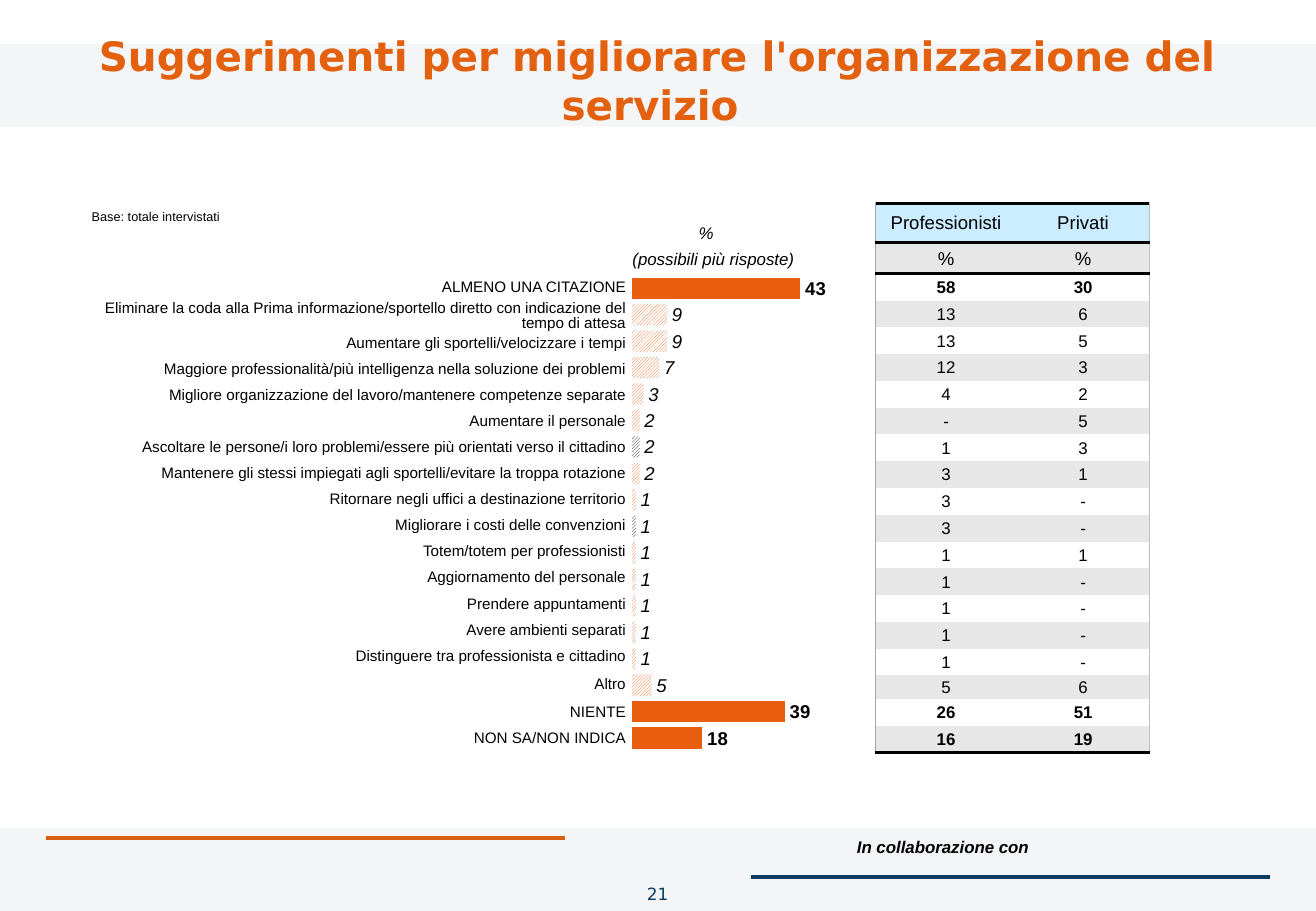
from dataclasses import dataclass

from lxml import etree
from pptx import Presentation
from pptx import util as u
from pptx.chart.data import CategoryChartData
from pptx.dml.color import RGBColor
from pptx.enum import chart as ch, dml, shapes, text
from pptx.oxml import parse_xml
from pptx.oxml.ns import nsdecls, qn


@dataclass(frozen=True)
class Theme:
    title_orange: str = "E3600F"
    bar_orange: str = "E95E0F"
    navy: str = "073C62"
    band: str = "1E3D5C"
    band_opacity: int = 5
    header: str = "CCECFF"
    stripe: str = "E7E7E7"
    left_edge: str = "A6A6A6"
    right_edge: str = "BFBFBF"
    black: str = "000000"
    white: str = "FFFFFF"
    title_size: float = 24
    header_size: float = 11
    body_size: float = 10
    label_size: float = 9
    note_size: float = 7.5
    sans: str = "Arial"
    display: str = "DejaVu Sans"


THEME = Theme()
Pt = u.Pt
ALIGN, ANCHOR = text.PP_ALIGN, text.MSO_ANCHOR
NO_STYLE = "{2D5ABB26-0587-4C30-8999-92F81FD0307C}"

ANSWERS = [  # suggestion, total, professionals, private citizens
    ("ALMENO UNA CITAZIONE", 43, "58", "30"),
    ("Eliminare la coda alla Prima informazione/sportello diretto con indicazione del tempo di attesa", 9, "13", "6"),
    ("Aumentare gli sportelli/velocizzare i tempi", 9, "13", "5"),
    ("Maggiore professionalità/più intelligenza nella soluzione dei problemi", 7, "12", "3"),
    ("Migliore organizzazione del lavoro/mantenere competenze separate", 3, "4", "2"),
    ("Aumentare il personale", 2, "-", "5"),
    ("Ascoltare le persone/i loro problemi/essere più orientati verso il cittadino", 2, "1", "3"),
    ("Mantenere gli stessi impiegati agli sportelli/evitare la troppa rotazione", 2, "3", "1"),
    ("Ritornare negli uffici a destinazione territorio", 1, "3", "-"),
    ("Migliorare i costi delle convenzioni", 1, "3", "-"),
    ("Totem/totem per professionisti", 1, "1", "1"),
    ("Aggiornamento del personale", 1, "1", "-"),
    ("Prendere appuntamenti", 1, "1", "-"),
    ("Avere ambienti separati", 1, "1", "-"),
    ("Distinguere tra professionista e cittadino", 1, "1", "-"),
    ("Altro", 5, "5", "6"),
    ("NIENTE", 39, "26", "51"),
    ("NON SA/NON INDICA", 18, "16", "19"),
]
SUMMARY_ROWS = (0, 16, 17)
BLACK_HATCHED = (6, 9)


def rgb(value):
    return RGBColor.from_string(value)


def format_font(font, size, color=THEME.black, name=THEME.sans, bold=False, italic=False):
    font.size, font.name, font.bold, font.italic = Pt(size), name, bold, italic
    font.color.rgb = rgb(color)


def write(frame, words, align=ALIGN.CENTER, spacing=None, **font):
    paragraph = frame.paragraphs[0]
    paragraph.alignment = align
    if spacing is not None:
        paragraph.line_spacing = spacing
    run = paragraph.add_run()
    run.text = words
    format_font(run.font, **font)


def set_insets(target, left, top, right, bottom):
    target.margin_left, target.margin_top = Pt(left), Pt(top)
    target.margin_right, target.margin_bottom = Pt(right), Pt(bottom)


def add_text(slide, box, words, insets=(7.2, 3.6, 7.2, 3.6), anchor=ANCHOR.TOP, **style):
    frame = slide.shapes.add_textbox(*map(Pt, box)).text_frame
    frame.word_wrap = True
    frame.vertical_anchor = anchor
    set_insets(frame, *insets)
    write(frame, words, **style)


def add_rule(slide, left, right, y, color):
    rule = slide.shapes.add_connector(shapes.MSO_CONNECTOR.STRAIGHT, Pt(left), Pt(y), Pt(right), Pt(y))
    rule.line.color.rgb = rgb(color)
    rule.line.width = Pt(2)
    etree.SubElement(rule._element.spPr, qn("a:effectLst"))


def add_band(slide, top):
    band = slide.shapes.add_shape(shapes.MSO_SHAPE.RECTANGLE, 0, Pt(top), Pt(780), Pt(49))
    band.shadow.inherit = False
    band.line.fill.background()
    band.fill.solid()
    band.fill.fore_color.rgb = rgb(THEME.band)
    color = band._element.spPr.find(f".//{qn('a:srgbClr')}")
    etree.SubElement(color, qn("a:alpha"), val=str(THEME.band_opacity * 1000))


def place_title(slide, words):
    title = slide.shapes.title
    slide.shapes._spTree.append(title._element)  # in front of the bands
    title.left, title.top, title.width, title.height = map(Pt, (-0.5, 6, 780, 82.5))
    frame = title.text_frame
    frame.word_wrap = True
    frame.auto_size = text.MSO_AUTO_SIZE.NONE
    frame.vertical_anchor = ANCHOR.MIDDLE
    write(frame, words, size=THEME.title_size, color=THEME.title_orange, name=THEME.display, bold=True)


def add_plain_table(slide, left, top, widths, heights):
    frame = slide.shapes.add_table(len(heights), len(widths), Pt(left), Pt(top), Pt(sum(widths)), Pt(sum(heights)))
    table = frame.table
    table.first_row = table.horz_banding = False
    table._tbl.tblPr.find(qn("a:tableStyleId")).text = NO_STYLE
    for column, width in zip(table.columns, widths):
        column.width = Pt(width)
    for row, height in zip(table.rows, heights):
        row.height = Pt(height)
    return table


def fill_cell(cell, words, borders, fill=None, insets=(0.7, 0.7, 0.7, 0), anchor=ANCHOR.MIDDLE, **style):
    """Borders map a side (L, R, T, B) to a colour and a width."""
    properties = cell._tc.get_or_add_tcPr()
    for side in "LRTB":
        if side in borders:
            color, width = borders[side]
            properties.append(parse_xml(
                f'<a:ln{side} {nsdecls("a")} w="{Pt(width)}"><a:solidFill>'
                f'<a:srgbClr val="{color}"/></a:solidFill></a:ln{side}>'))
    if fill:
        cell.fill.solid()
        cell.fill.fore_color.rgb = rgb(fill)
    else:
        cell.fill.background()
    cell.vertical_anchor = anchor
    set_insets(cell, *insets)
    write(cell.text_frame, words, **style)


def add_suggestions(slide):
    heights = [11, 21.6, 11.8] + [15.45] * 12 + [16.6, 16.6, 15.45]
    table = add_plain_table(slide, 52.5, 163.5, [319], heights)
    borders = dict.fromkeys("LRTB", (THEME.white, 1))
    for index, (suggestion, *_) in enumerate(ANSWERS):
        fill_cell(table.cell(index, 0), suggestion, borders, anchor=ANCHOR.BOTTOM, align=ALIGN.RIGHT,
                  spacing=Pt(9) if index == 1 else None, size=THEME.label_size)


def add_breakdown(slide):
    rows = [("Professionisti", "Privati"), ("%", "%")] + [answer[2:] for answer in ANSWERS]
    heights = [23.1, 18.7] + [15.9] * 15 + [14, 15.9, 15.9]
    table = add_plain_table(slide, 519, 120.5, [83.5, 79], heights)
    thick = (THEME.black, 2)
    for index, row in enumerate(rows):
        is_header = index == 0
        fill = THEME.header if is_header else THEME.stripe if index % 2 else THEME.white
        for column, value in enumerate(row):
            borders = {"R": (THEME.right_edge, 1)} if column else {"L": (THEME.left_edge, 1)}
            if index < 2:
                borders["T"] = thick
            if is_header or index == len(rows) - 1:
                borders["B"] = thick
            fill_cell(table.cell(index, column), value, borders, fill,
                      insets=(2.9,) * 4 if is_header else (0.7, 0.7, 0.7, 0),
                      size=THEME.header_size if index < 2 else THEME.body_size,
                      bold=index - 2 in SUMMARY_ROWS)


def set_plot_area(chart, **fractions):
    area = chart._chartSpace.chart.plotArea
    for layout in area.findall(qn("c:layout")):
        area.remove(layout)
    sizes = "".join(f'<c:{key} val="{value}"/>' for key, value in fractions.items())
    area.insert(0, parse_xml(
        f'<c:layout {nsdecls("c")}><c:manualLayout><c:layoutTarget val="inner"/>'
        f'<c:xMode val="edge"/><c:yMode val="edge"/>{sizes}</c:manualLayout></c:layout>'))


def add_totals_chart(slide):
    data = CategoryChartData(number_format="0")
    data.categories = [str(number + 1) for number in range(len(ANSWERS))]
    data.add_series("Series 1", [answer[1] for answer in ANSWERS])
    chart = slide.shapes.add_chart(ch.XL_CHART_TYPE.BAR_CLUSTERED, *map(Pt, (278.5, 159, 468.5, 312)), data).chart
    chart.has_legend = chart.has_title = False
    format_font(chart.font, THEME.header_size)
    set_plot_area(chart, x=0.205, y=0.013, w=0.496, h=0.905)
    chart.category_axis.reverse_order = True
    chart.category_axis.visible = chart.value_axis.visible = False
    chart.value_axis.has_major_gridlines = False
    chart.value_axis.minimum_scale, chart.value_axis.maximum_scale = 0, 100
    chart.value_axis.major_unit = 10
    plot = chart.plots[0]
    plot.gap_width = 24
    plot.vary_by_categories = False
    totals = plot.series[0]
    totals.format.fill.solid()
    totals.format.fill.fore_color.rgb = rgb(THEME.bar_orange)
    labels = totals.data_labels
    labels.show_value = True
    labels.position = ch.XL_LABEL_POSITION.OUTSIDE_END
    format_font(labels.font, THEME.header_size, italic=True)
    for index in range(len(ANSWERS)):
        point = totals.points[index]
        if index in SUMMARY_ROWS:
            format_font(point.data_label.font, THEME.header_size, bold=True)
            point.data_label.position = ch.XL_LABEL_POSITION.OUTSIDE_END
        else:
            hatch = point.format.fill
            hatch.patterned()
            hatch.pattern = dml.MSO_PATTERN.DARK_UPWARD_DIAGONAL
            hatch.fore_color.rgb = rgb(THEME.black if index in BLACK_HATCHED else THEME.bar_orange)
            hatch.back_color.rgb = rgb(THEME.white)


def main():
    deck = Presentation()
    deck.slide_width, deck.slide_height = Pt(780), Pt(540)
    slide = deck.slides.add_slide(deck.slide_layouts[5])
    add_rule(slide, 27.5, 335, 496.8, THEME.title_orange)
    add_rule(slide, 445, 752.5, 519.8, THEME.navy)
    for top in (491, 26):
        add_band(slide, top)
    add_text(slide, (471.5, 493, 147.5, 19), "In collaborazione con ", insets=(6.5, 2.9, 6.5, 2.9),
             align=ALIGN.RIGHT, size=THEME.body_size, bold=True, italic=True)
    place_title(slide, "Suggerimenti per migliorare l'organizzazione del servizio ")
    add_text(slide, (355.5, 520, 68.5, 28), "21", size=THEME.body_size, color=THEME.navy, name=THEME.display)
    add_text(slide, (404.5, 132, 28, 12), "%", insets=(0,) * 4, anchor=ANCHOR.MIDDLE,
             size=THEME.body_size, italic=True)
    add_totals_chart(slide)
    add_breakdown(slide)
    add_text(slide, (48.5, 116.5, 174, 14.5), "Base: totale intervistati", insets=(5.8, 2.9, 5.8, 2.9),
             align=ALIGN.JUSTIFY, spacing=1.5, size=THEME.note_size)
    add_text(slide, (288.5, 144, 268.5, 19.5), "(possibili più risposte)", size=THEME.body_size, italic=True)
    add_suggestions(slide)
    deck.save("out.pptx")


if __name__ == "__main__":
    main()
